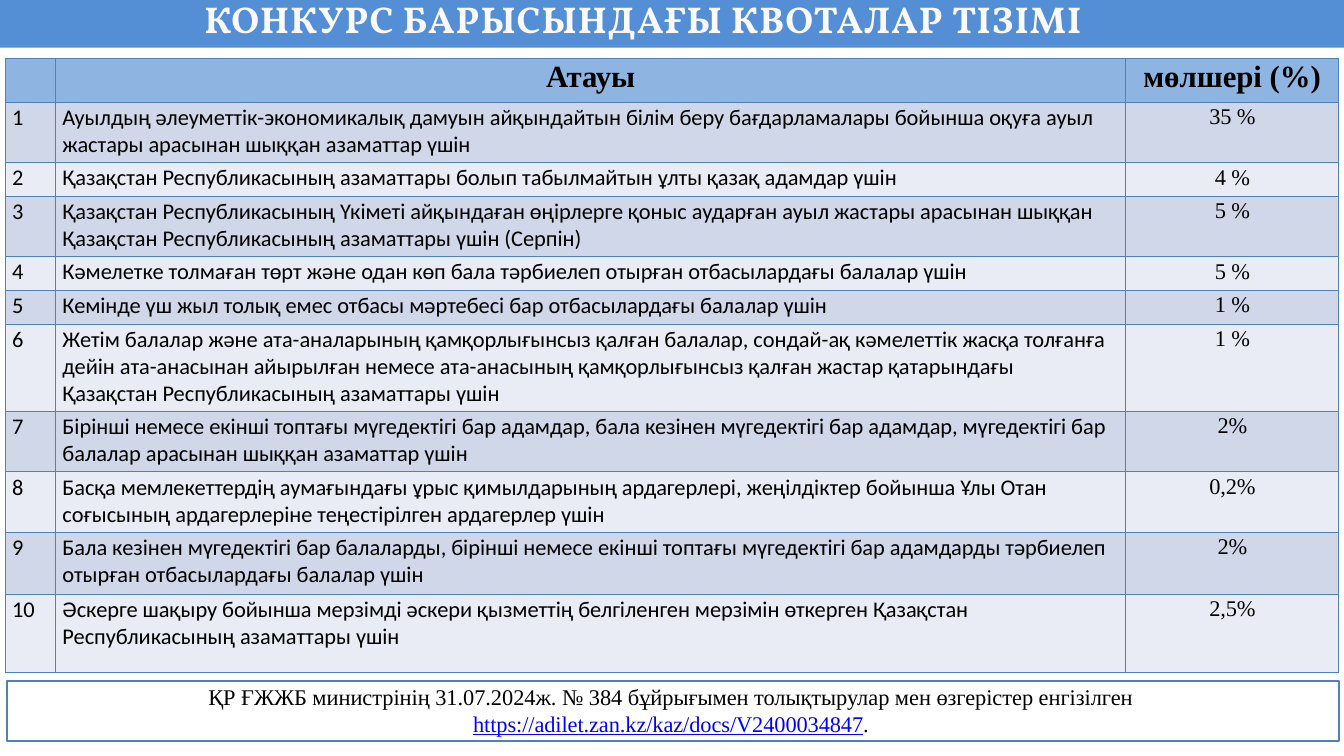
import pptx
import pptx.util
import pptx.dml.color
import pptx.enum.shapes
import pptx.enum.text
import pptx.oxml
import pptx.oxml.ns

Inches, Pt = pptx.util.Inches, pptx.util.Pt
RGBColor = pptx.dml.color.RGBColor
ALIGN = pptx.enum.text.PP_ALIGN
RECT = pptx.enum.shapes.MSO_SHAPE.RECTANGLE

# Content: \n starts a paragraph, \v breaks a line
TITLE = "КОНКУРС БАРЫСЫНДАҒЫ КВОТАЛАР ТІЗІМІ"
HEADER = ("", "Атауы", "мөлшері (%)")
QUOTAS = [  # name, share, row height
    ("Ауылдың әлеуметтік-экономикалық дамуын айқындайтын білім беру бағдарламалары "
     "бойынша оқуға ауыл жастары арасынан шыққан азаматтар үшін", "35 %", 0.9),
    ("Қазақстан Республикасының азаматтары болып табылмайтын ұлты қазақ адамдар үшін",
     "4 %", 0.5),
    ("Қазақстан Республикасының Үкіметі айқындаған өңірлерге қоныс аударған ауыл "
     "жастары арасынан шыққан Қазақстан Республикасының азаматтары үшін (Серпін)",
     "5 %", 0.9),
    ("Кәмелетке толмаған төрт және одан көп бала тәрбиелеп отырған отбасылардағы "
     "балалар үшін", "5 %", 0.5),
    ("Кемінде үш жыл толық емес отбасы мәртебесі бар отбасылардағы балалар үшін",
     "1 %", 0.5),
    ("Жетім балалар және ата-аналарының қамқорлығынсыз қалған балалар, сондай-ақ "
     "кәмелеттік жасқа толғанға\nдейін ата-анасынан айырылған немесе ата-анасының "
     "қамқорлығынсыз қалған жастар қатарындағы\vҚазақстан Республикасының азаматтары "
     "үшін", "1 %", 1.3),
    ("Бірінші немесе екінші топтағы мүгедектігі бар адамдар, бала кезінен мүгедектігі "
     "бар адамдар, мүгедектігі бар балалар арасынан шыққан азаматтар үшін", "2%", 0.9),
    ("Басқа мемлекеттердiң аумағындағы ұрыс қимылдарының ардагерлері, жеңілдіктер "
     "бойынша Ұлы Отан\nсоғысының ардагерлеріне теңестірілген ардагерлер үшін",
     "0,2%", 0.9),
    ("Бала кезінен мүгедектігі бар балаларды, бірінші немесе екінші топтағы мүгедектігі "
     "бар адамдарды тәрбиелеп отырған отбасылардағы балалар үшін", "2%", 0.92),
    ("Әскерге шақыру бойынша мерзімді әскери қызметтің белгіленген мерзімін өткерген "
     "Қазақстан Республикасының азаматтары үшін", "2,5%", 1.16),
]
NOTE = ("ҚР ҒЖЖБ министрінің 31.07.2024ж. № 384 бұйрығымен толықтырулар мен өзгерістер "
        "енгізілген ")
LINK = "https://adilet.zan.kz/kaz/docs/V2400034847"

COLS = (0.75, 15.92, 3.17)
HEADER_HEIGHT = 0.65

BLACK = RGBColor(0x00, 0x00, 0x00)
BLUE = RGBColor(0x00, 0x00, 0xFF)
TITLE_TEXT = RGBColor(0xF9, 0xF9, 0xFF)
BANNER = RGBColor(0x54, 0x8E, 0xD4)
BORDER = RGBColor(0x4F, 0x81, 0xBC)
HEADER_FILL = RGBColor(0x8E, 0xB4, 0xE2)
BANDS = (RGBColor(0xD0, 0xD7, 0xE8), RGBColor(0xE9, 0xEC, 0xF4))
SERIF = "Times New Roman"


def style_run(r, size=24, font=SERIF, color=BLACK, bold=False, underline=False, spacing=0):
    r.font.size, r.font.name = Pt(size), font
    r.font.bold, r.font.underline = bold, underline
    r.font.color.rgb = color
    r._r.get_or_add_rPr().set("spc", str(round(spacing * 100)))


def write(tf, text, align=ALIGN.LEFT, before=0, left=0, first=0, **run_format):
    """Fill a text frame; only the first paragraph gets space before it."""
    for i, line in enumerate(text.split("\n")):
        p = tf.add_paragraph() if i else tf.paragraphs[0]
        p.text = line
        p.alignment = align
        p.space_before = Pt(0 if i else before)
        pPr = p._p.get_or_add_pPr()
        pPr.set("marL", str(Inches(left)))
        pPr.set("indent", str(Inches(first)))
        for r in p.runs:
            style_run(r, **run_format)
    return p


def add_box(slide, x, y, w, h, top_inset):
    tf = slide.shapes.add_textbox(Inches(x), Inches(y), Inches(w), Inches(h)).text_frame
    tf.word_wrap = True
    tf.margin_left = tf.margin_right = tf.margin_bottom = 0
    tf.margin_top = Inches(top_inset)
    return tf


def add_rect(slide, x, y, w, h):
    sp = slide.shapes.add_shape(RECT, Inches(x), Inches(y), Inches(w), Inches(h))
    sp.shadow.inherit = False
    return sp


def fill_cell(cell, text, fill, top_inset=0.03, **text_format):
    cell.margin_left = cell.margin_right = cell.margin_bottom = 0
    cell.margin_top = Inches(top_inset)
    write(cell.text_frame, text, **text_format)
    tcPr = cell._tc.get_or_add_tcPr()
    for side in ("lnL", "lnR", "lnT", "lnB"):
        tcPr.append(pptx.oxml.parse_xml(
            f'<a:{side} {pptx.oxml.ns.nsdecls("a")} w="{Pt(1)}"><a:solidFill>'
            f'<a:srgbClr val="{BORDER}"/></a:solidFill></a:{side}>'))
    cell.fill.solid()
    cell.fill.fore_color.rgb = fill


prs = pptx.Presentation()
prs.slide_width, prs.slide_height = Inches(20), Inches(11.25)
slide = prs.slides.add_slide(prs.slide_layouts[6])

# Quota table
heights = [HEADER_HEIGHT] + [h for _, _, h in QUOTAS]
table = slide.shapes.add_table(
    len(heights), len(COLS), Inches(0.08), Inches(0.87),
    Inches(sum(COLS)), Inches(sum(heights))).table
for column, width in zip(table.columns, COLS):
    column.width = Inches(width)
for row, height in zip(table.rows, heights):
    row.height = Inches(height)

for c, text in enumerate(HEADER):
    fill_cell(table.cell(0, c), text, HEADER_FILL, align=ALIGN.CENTER, before=2.5,
              size=33, bold=True, spacing=-0.05)
for n, (name, share, _) in enumerate(QUOTAS, 1):
    band = BANDS[(n - 1) % 2]
    for c, text in enumerate((str(n), name)):
        fill_cell(table.cell(n, c), text, band, before=2.2, left=0.1,
                  font="Calibri", spacing=-0.05)
    fill_cell(table.cell(n, 2), share, band, top_inset=0.04, align=ALIGN.CENTER,
              before=3, left=0.01, spacing=-0.2)

# Framed note with the source address
frame = add_rect(slide, 0.1, 10.13, 19.83, 0.9)
frame.fill.background()
frame.line.color.rgb = BORDER
frame.line.width = Pt(1.92)
tf = add_box(slide, 3.09, 10.15, 13.85, 0.83, 0.01)
p = write(tf, NOTE, before=1, left=3.95, first=-3.94, spacing=-0.05)
for text, run_format in ((LINK, dict(color=BLUE, underline=True, spacing=-0.1)), (".", {})):
    r = p.add_run()
    r.text = text
    style_run(r, **run_format)

# Title banner
banner = add_rect(slide, 0, 0, 20, 0.71)
banner.fill.solid()
banner.fill.fore_color.rgb = BANNER
banner.line.fill.background()
tf = add_box(slide, 3.03, -0.08, 13.91, 0.7, 0.02)
write(tf, TITLE, before=1.1, left=0.01, size=40, font="Vollkorn", color=TITLE_TEXT,
      bold=True, spacing=1.1)

prs.save("out.pptx")
